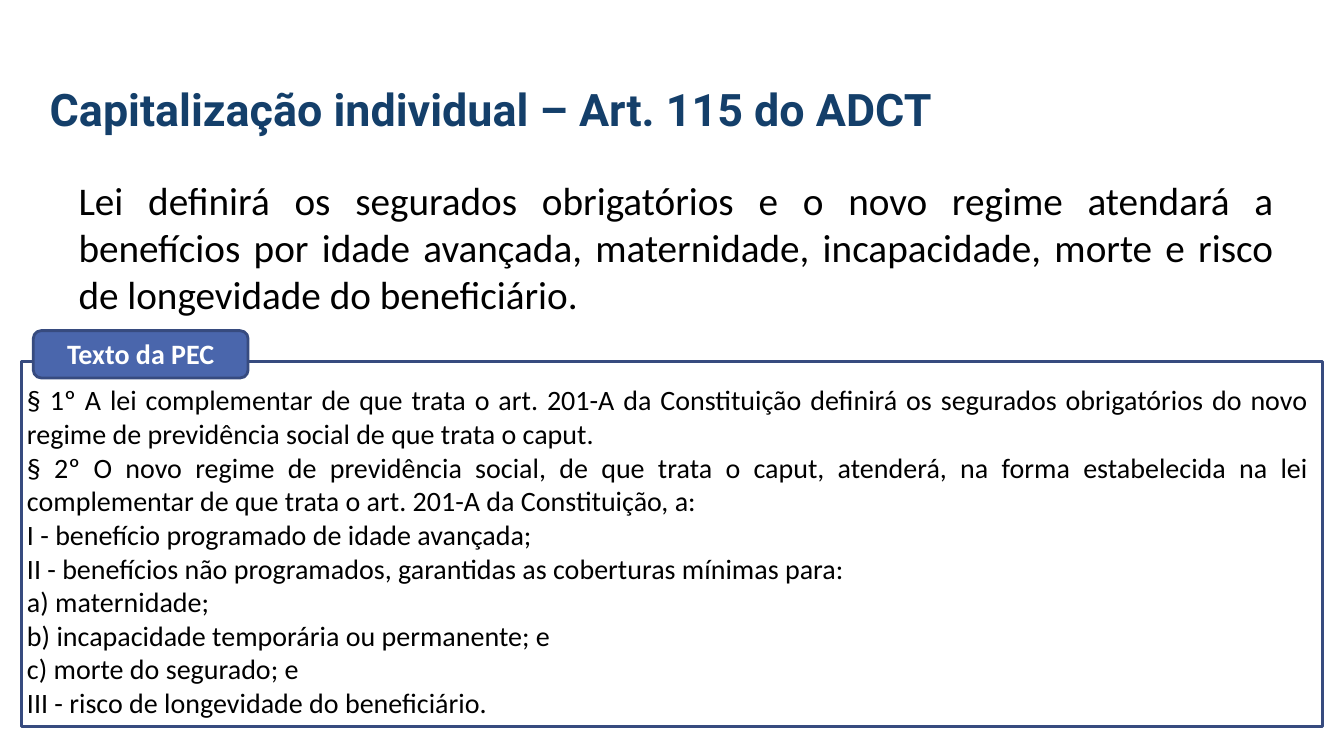
"""Build the slide on individual capitalisation under Art. 115 of the ADCT."""
import pptx
import pptx.util
import pptx.dml.color
import pptx.enum.shapes
import pptx.enum.text

Pt = pptx.util.Pt
RGB = pptx.dml.color.RGBColor
SHAPES = pptx.enum.shapes.MSO_SHAPE
ALIGN = pptx.enum.text.PP_ALIGN
ANCHOR = pptx.enum.text.MSO_ANCHOR

TITLE = "Capitalização individual – Art. 115 do ADCT"
SUMMARY = (
    "Lei definirá os segurados obrigatórios e o novo regime atendará a benefícios por idade "
    "avançada, maternidade, incapacidade, morte e risco de longevidade do beneficiário."
)
BADGE = "Texto da PEC"
ARTICLE = [
    "§ 1º A lei complementar de que trata o art. 201-A da Constituição definirá os segurados "
    "obrigatórios do novo regime de previdência social de que trata o caput.",
    "§ 2º O novo regime de previdência social, de que trata o caput, atenderá, na forma "
    "estabelecida na lei complementar de que trata o art. 201-A da Constituição, a:",
    "I - benefício programado de idade avançada;",
    "II - benefícios não programados, garantidas as coberturas mínimas para:",
    "a) maternidade;",
    "b) incapacidade temporária ou permanente; e",
    "c) morte do segurado; e",
    "III - risco de longevidade do beneficiário.",
]
COLORS = {"title": "143F6A", "body": "000000", "badge": "4A66AC", "border": "374B7F", "white": "FFFFFF"}

TITLE_BOX = (0, 54.7, 746.6, 46)
SUMMARY_BOX = (49, 122.4, 867.6, 108.7)
PANEL_BOX = (15.1, 258.5, 929.5, 260.6)
ARTICLE_BOX = (12.2, 270, 929.5, 249.8)
BADGE_BOX = (23.8, 236.2, 153.4, 33.8)
BADGE_TEXT_BOX = BADGE_BOX[:3] + (31.7,)


def add_text(slide, box, paragraphs, *, size, color="body", font="Calibri", bold=False,
             align=ALIGN.JUSTIFY, anchor=ANCHOR.TOP, inset=7.2):
    frame = slide.shapes.add_textbox(*map(Pt, box)).text_frame
    frame.word_wrap = True
    frame.vertical_anchor = anchor
    frame.margin_left = Pt(inset)
    frame.text = "\n".join(paragraphs)
    for paragraph in frame.paragraphs:
        paragraph.alignment = align
        paragraph.font.size = Pt(size)
        paragraph.font.name = font
        paragraph.font.bold = bold
        paragraph.font.color.rgb = RGB.from_string(COLORS[color])


def add_frame(slide, box, kind, fill=None):
    frame = slide.shapes.add_shape(kind, *map(Pt, box))
    frame.shadow.inherit = False
    if fill:
        frame.fill.solid()
        frame.fill.fore_color.rgb = RGB.from_string(COLORS[fill])
    else:
        frame.fill.background()
    frame.line.color.rgb = RGB.from_string(COLORS["border"])
    frame.line.width = Pt(2)


def main():
    deck = pptx.Presentation()
    deck.slide_width, deck.slide_height = Pt(960), Pt(540)
    slide = deck.slides.add_slide(deck.slide_layouts[6])
    add_text(slide, TITLE_BOX, [TITLE], size=32, color="title", font="Roboto", bold=True,
             align=ALIGN.LEFT, inset=35.5)
    add_frame(slide, PANEL_BOX, SHAPES.RECTANGLE)
    add_frame(slide, BADGE_BOX, SHAPES.ROUNDED_RECTANGLE, fill="badge")
    add_text(slide, BADGE_TEXT_BOX, [BADGE], size=20, color="white", bold=True,
             align=ALIGN.CENTER, anchor=ANCHOR.MIDDLE)
    add_text(slide, ARTICLE_BOX, ARTICLE, size=20)
    add_text(slide, SUMMARY_BOX, [SUMMARY], size=28)
    deck.save("out.pptx")


if __name__ == "__main__":
    main()
